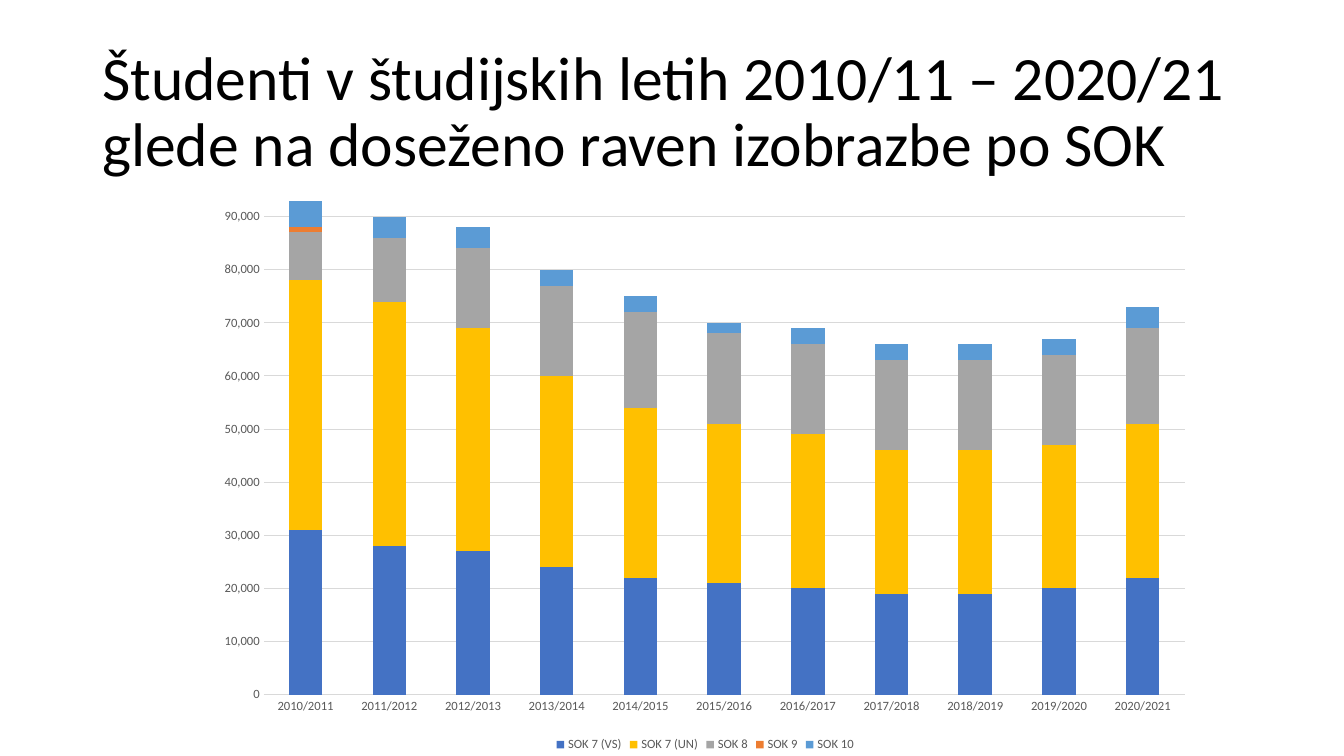
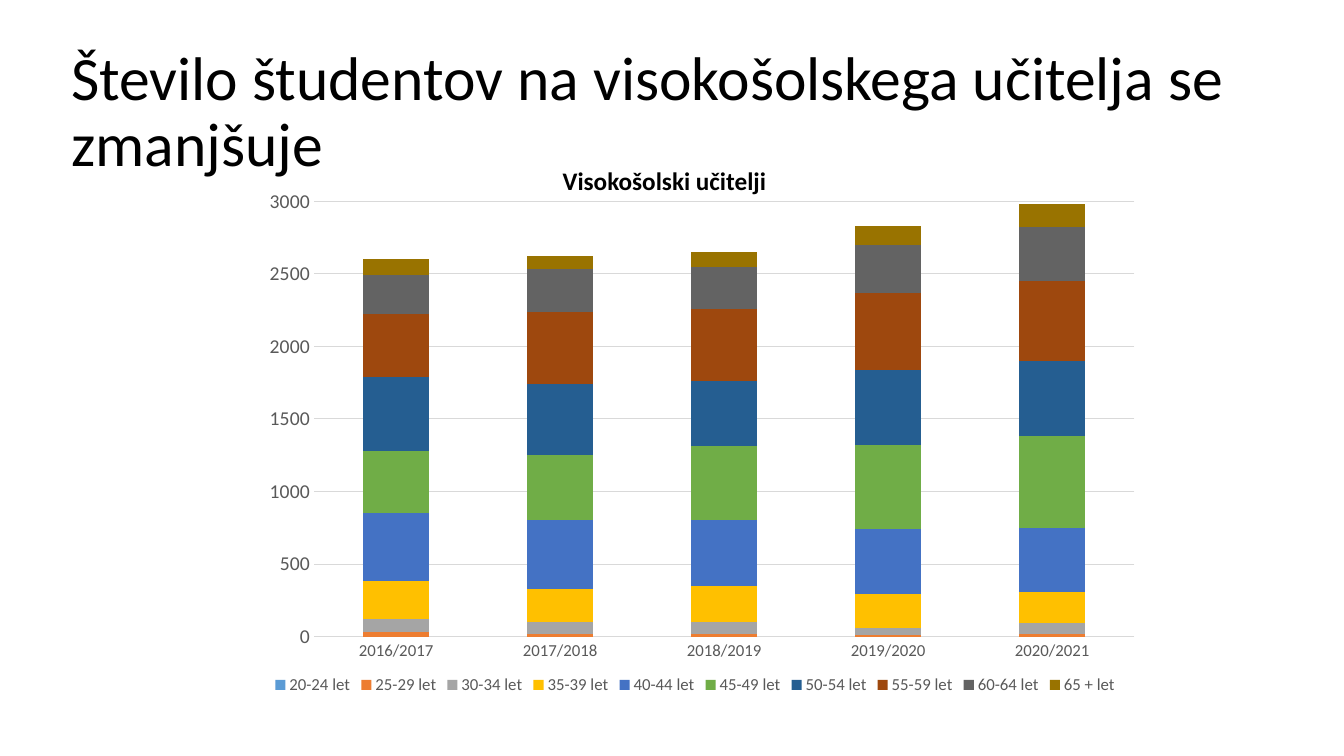
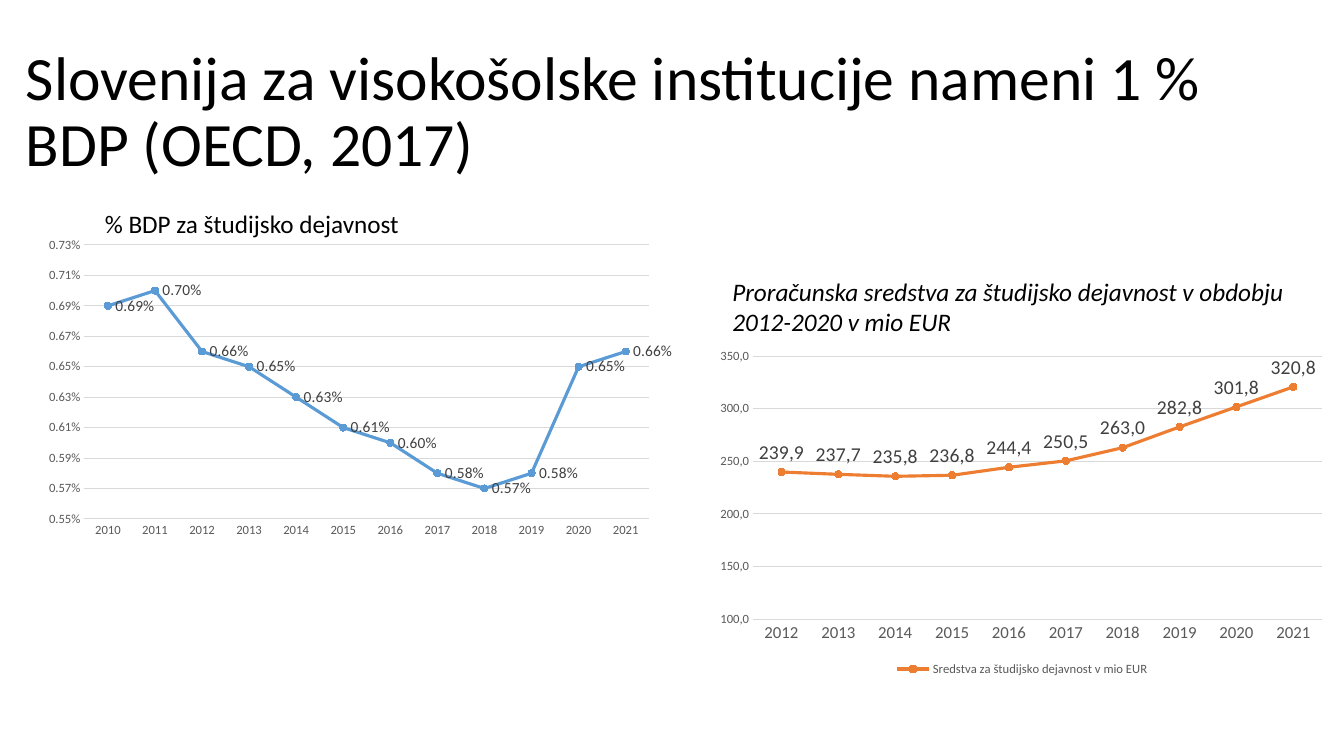
from dataclasses import dataclass
from typing import Optional

from lxml import etree
from pptx import Presentation
from pptx import util as u
from pptx.chart.data import CategoryChartData
from pptx.dml.color import RGBColor
from pptx.enum import chart as ch
from pptx.enum import text as tx
from pptx.oxml.ns import qn

COLUMNS, ROWS = 160, 90
CELL = u.Inches(13.33) / COLUMNS


# Shared look
@dataclass(frozen=True)
class Theme:
    font: str = "Calibri"
    ink: str = "000000"
    axis_text: str = "595959"
    label_text: str = "404040"
    rule: str = "D9D9D9"
    blue: str = "4472C4"
    gold: str = "FFC000"
    gray: str = "A5A5A5"
    orange: str = "ED7D31"
    sky: str = "5B9BD5"
    green: str = "70AD47"
    navy: str = "255E91"
    rust: str = "9E480E"
    charcoal: str = "636363"
    olive: str = "997300"
    title_size: float = 44
    caption_size: float = 18
    chart_size: float = 10
    small_size: float = 9
    medium_size: float = 12
    large_size: float = 14
    rule_width: float = 0.75
    curve_width: float = 2.25
    marker_size: int = 5


THEME = Theme()


@dataclass(frozen=True)
class Box:
    """Place and size in grid columns and rows."""
    column: float
    row: float
    width: float
    height: float

    def emu(self) -> tuple[int, ...]:
        return tuple(round(n * CELL) for n in
                     (self.column, self.row, self.width, self.height))


@dataclass(frozen=True)
class Series:
    name: str
    color: str
    values: list


@dataclass(frozen=True)
class Scale:
    low: float
    high: float
    step: float
    number_format: str = "General"


@dataclass(frozen=True)
class Labels:
    position: ch.XL_LABEL_POSITION
    size: float


@dataclass(frozen=True)
class Graph:
    box: Box
    plot: tuple[float, float, float, float]  # inner plot as shares of the chart
    categories: list[str]
    series: list[Series]
    scale: Scale
    category_size: float = THEME.small_size
    value_size: float = THEME.small_size
    legend_size: Optional[float] = THEME.small_size
    labels: Optional[Labels] = None  # given for line charts


@dataclass(frozen=True)
class Caption:
    box: Box
    words: str
    bold: bool = False
    italic: bool = False


@dataclass(frozen=True)
class Page:
    title: str
    left: float
    width: float
    graphs: list[Graph]
    captions: list[Caption]


# Drawing
def style_font(font, size: float, color: str) -> None:
    font.name = THEME.font
    font.size = u.Pt(size)
    font.color.rgb = RGBColor.from_string(color)


def paint(fill, color: str) -> None:
    fill.solid()
    fill.fore_color.rgb = RGBColor.from_string(color)


def rule_line(line, color: str, width: float) -> None:
    line.color.rgb = RGBColor.from_string(color)
    line.width = u.Pt(width)


def add_words(slide, box: Box, words: str, size: float):
    frame = slide.shapes.add_textbox(*box.emu()).text_frame
    frame.word_wrap = True
    frame.text = words
    style_font(frame.paragraphs[0].runs[0].font, size, THEME.ink)
    return frame


def add_title(slide, page: Page) -> None:
    frame = add_words(slide, Box(page.left, 4.8, page.width, 17.4),
                      page.title, THEME.title_size)
    frame.vertical_anchor = tx.MSO_ANCHOR.MIDDLE
    frame.paragraphs[0].line_spacing = 0.9


def add_caption(slide, caption: Caption) -> None:
    frame = add_words(slide, caption.box, caption.words, THEME.caption_size)
    frame.auto_size = tx.MSO_AUTO_SIZE.SHAPE_TO_FIT_TEXT
    font = frame.paragraphs[0].runs[0].font
    font.bold, font.italic = caption.bold, caption.italic


def place_plot(chart, shares: tuple[float, float, float, float]) -> None:
    area = chart.element.find(".//" + qn("c:plotArea"))
    for old in area.findall(qn("c:layout")):
        area.remove(old)
    layout = etree.Element(qn("c:layout"))
    manual = etree.SubElement(layout, qn("c:manualLayout"))
    settings = [("layoutTarget", "inner"), ("xMode", "edge"), ("yMode", "edge"),
                *zip("xywh", shares)]
    for tag, value in settings:
        etree.SubElement(manual, qn(f"c:{tag}")).set("val", str(value))
    area.insert(0, layout)


def style_axes(chart, graph: Graph) -> None:
    years, amounts = chart.category_axis, chart.value_axis
    for axis, size in ((years, graph.category_size), (amounts, graph.value_size)):
        axis.major_tick_mark = axis.minor_tick_mark = ch.XL_TICK_MARK.NONE
        style_font(axis.tick_labels.font, size, THEME.axis_text)
    years.has_major_gridlines = False
    rule_line(years.format.line, THEME.rule, THEME.rule_width)
    amounts.format.line.fill.background()
    amounts.has_major_gridlines = True
    rule_line(amounts.major_gridlines.format.line, THEME.rule, THEME.rule_width)
    amounts.minimum_scale = graph.scale.low
    amounts.maximum_scale = graph.scale.high
    amounts.major_unit = graph.scale.step
    amounts.tick_labels.number_format = graph.scale.number_format
    amounts.tick_labels.number_format_is_linked = False


def style_curve(curve, color: str) -> None:
    curve.smooth = False
    rule_line(curve.format.line, color, THEME.curve_width)
    curve.marker.style = ch.XL_MARKER_STYLE.CIRCLE
    curve.marker.size = THEME.marker_size
    paint(curve.marker.format.fill, color)
    rule_line(curve.marker.format.line, color, THEME.rule_width)


def add_labels(plot, graph: Graph) -> None:
    plot.has_data_labels = True
    labels = plot.data_labels
    labels.show_value = True
    labels.position = graph.labels.position
    labels.number_format = graph.scale.number_format
    labels.number_format_is_linked = False
    style_font(labels.font, graph.labels.size, THEME.label_text)


def add_graph(slide, graph: Graph) -> None:
    data = CategoryChartData(number_format=graph.scale.number_format)
    data.categories = graph.categories
    for entry in graph.series:
        data.add_series(entry.name, entry.values)
    kind = (ch.XL_CHART_TYPE.LINE_MARKERS if graph.labels
            else ch.XL_CHART_TYPE.COLUMN_STACKED)
    chart = slide.shapes.add_chart(kind, *graph.box.emu(), data).chart
    chart.has_title = False
    style_font(chart.font, THEME.chart_size, THEME.ink)
    place_plot(chart, graph.plot)
    style_axes(chart, graph)

    plot = chart.plots[0]
    plot.vary_by_categories = False
    if graph.labels:
        add_labels(plot, graph)
    else:
        plot.gap_width, plot.overlap = 150, 100
    for drawn, entry in zip(plot.series, graph.series):
        if graph.labels:
            style_curve(drawn, entry.color)
        else:
            paint(drawn.format.fill, entry.color)

    chart.has_legend = graph.legend_size is not None
    if chart.has_legend:
        chart.legend.position = ch.XL_LEGEND_POSITION.BOTTOM
        chart.legend.include_in_layout = False
        style_font(chart.legend.font, graph.legend_size, THEME.axis_text)


# Content
def school_years(first: int, last: int) -> list[str]:
    return [f"{year}/{year + 1}" for year in range(first, last + 1)]


def calendar_years(first: int, last: int) -> list[str]:
    return [str(year) for year in range(first, last + 1)]


STUDENTS = Graph(
    Box(24.5, 21.25, 118.9, 68.75), (0.058, 0.02, 0.922, 0.874),
    school_years(2010, 2020),
    [
        Series("SOK 7 (VS)", THEME.blue,
               [31000, 28000, 27000, 24000, 22000, 21000, 20000, 19000, 19000, 20000, 22000]),
        Series("SOK 7 (UN)", THEME.gold,
               [47000, 46000, 42000, 36000, 32000, 30000, 29000, 27000, 27000, 27000, 29000]),
        Series("SOK 8", THEME.gray,
               [9000, 12000, 15000, 17000, 18000, 17000, 17000, 17000, 17000, 17000, 18000]),
        Series("SOK 9", THEME.orange, [1000, 0] + [None] * 9),
        Series("SOK 10", THEME.sky,
               [5000, 4000, 4000, 3000, 3000, 2000, 3000, 3000, 3000, 3000, 4000]),
    ],
    Scale(0, 95000, 10000, "#,##0"))

TEACHERS = Graph(
    Box(30.25, 21.5, 105, 61.7), (0.068, 0.04, 0.93, 0.84),
    school_years(2016, 2020),
    [
        Series("20-24 let", THEME.sky, [0, None, 0, None, 0]),
        Series("25-29 let", THEME.orange, [30, 20, 20, 10, 20]),
        Series("30-34 let", THEME.gray, [90, 80, 80, 50, 70]),
        Series("35-39 let", THEME.gold, [260, 230, 250, 230, 220]),
        Series("40-44 let", THEME.blue, [470, 470, 450, 450, 440]),
        Series("45-49 let", THEME.green, [430, 450, 510, 580, 630]),
        Series("50-54 let", THEME.navy, [510, 490, 450, 520, 520]),
        Series("55-59 let", THEME.rust, [430, 500, 500, 530, 550]),
        Series("60-64 let", THEME.charcoal, [270, 290, 290, 330, 370]),
        Series("65 + let", THEME.olive, [110, 90, 100, 130, 160]),
    ],
    Scale(0, 3000, 500), category_size=THEME.medium_size,
    value_size=THEME.large_size, legend_size=THEME.medium_size)

GDP_SHARE = Graph(
    Box(4.45, 27.6, 75.6, 37.2), (0.074, 0.042, 0.89, 0.877),
    calendar_years(2010, 2021),
    [Series("% BDP", THEME.sky,
            [0.0069, 0.0070, 0.0066, 0.0065, 0.0063, 0.0061,
             0.0060, 0.0058, 0.0057, 0.0058, 0.0065, 0.0066])],
    Scale(0.0055, 0.0073, 0.0002, "0.00%"), legend_size=None,
    labels=Labels(ch.XL_LABEL_POSITION.RIGHT, 11))

BUDGET = Graph(
    Box(84.35, 40.8, 74.65, 40.2), (0.071, 0.04, 0.907, 0.779),
    calendar_years(2012, 2021),
    [Series("Sredstva za študijsko dejavnost v mio EUR", THEME.orange,
            [239.9, 237.7, 235.8, 236.8, 244.4, 250.5, 263.0, 282.8, 301.8, 320.8])],
    Scale(100, 350, 50, "[$-10424]#,##0.0;\\-#,##0.0"),
    category_size=THEME.medium_size,
    labels=Labels(ch.XL_LABEL_POSITION.ABOVE, THEME.large_size))

PAGES = [
    Page("Študenti v študijskih letih 2010/11 – 2020/21 glede na doseženo raven "
         "izobrazbe po SOK", 11, 145, [STUDENTS], []),
    Page("Število študentov na visokošolskega učitelja se zmanjšuje", 7.3, 149.6,
         [TEACHERS],
         [Caption(Box(65.8, 19.1, 53.5, 4.8), "Visokošolski učitelji", bold=True)]),
    Page("Slovenija za visokošolske institucije nameni 1 % BDP (OECD, 2017)", 1.9, 155.3,
         [GDP_SHARE, BUDGET],
         [Caption(Box(11.3, 24.25, 63.1, 4.8), "% BDP za študijsko dejavnost"),
          Caption(Box(86, 32.3, 71, 8.5),
                  "Proračunska sredstva za študijsko dejavnost v obdobju "
                  "2012-2020 v mio EUR", italic=True)]),
]


def main() -> None:
    deck = Presentation()
    deck.slide_width, deck.slide_height = round(COLUMNS * CELL), round(ROWS * CELL)
    blank = deck.slide_layouts[6]
    for page in PAGES:
        slide = deck.slides.add_slide(blank)
        add_title(slide, page)
        for graph in page.graphs:
            add_graph(slide, graph)
        for caption in page.captions:
            add_caption(slide, caption)
    deck.save("out.pptx")


if __name__ == "__main__":
    main()
